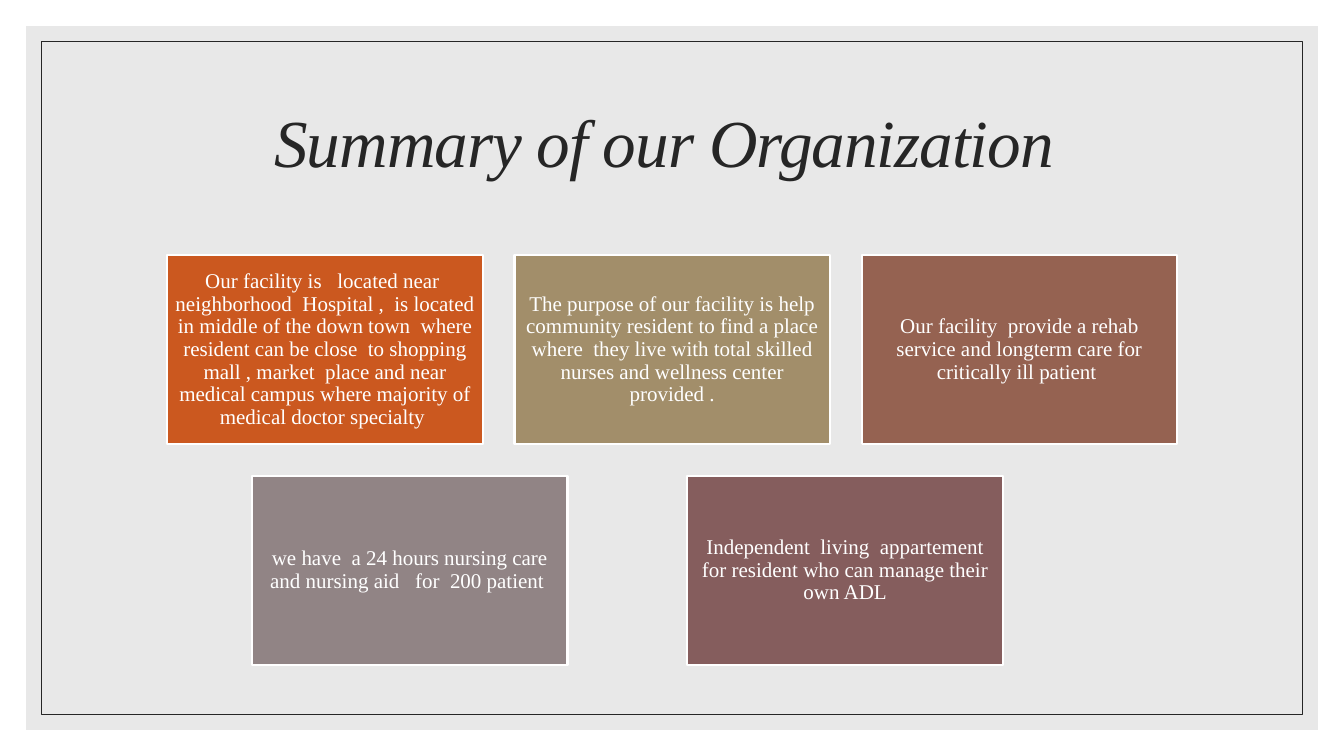
import pptx
import pptx.util
import pptx.dml.color
import pptx.enum.shapes
import pptx.enum.text

Pt = pptx.util.Pt
FONT = "Times New Roman"
COLOURS = {
    "white": "FFFFFF", "panel": "E8E8E8", "ink": "262626",
    "orange": "CB581F", "sand": "A28E6A", "brown": "956251",
    "grey": "918485", "plum": "855D5D",
}
TITLE = "Summary of our Organization "
ROWS = [
    {"left": 119.5, "pitch": 248, "cards": [
        ("orange", "Our facility is   located near  neighborhood  Hospital ,  is located in middle of the down town  where resident can be close  to shopping mall , market  place and near medical campus where majority of medical doctor specialty "),
        ("sand", "The purpose of our facility is help community resident to find a place where  they live with total skilled nurses and wellness center provided ."),
        ("brown", "Our facility  provide a rehab service and longterm care for critically ill patient "),
    ]},
    {"left": 180, "pitch": 311, "cards": [
        ("grey", "we have  a 24 hours nursing care and nursing aid   for  200 patient "),
        ("plum", "Independent  living  appartement for resident who can manage their own ADL"),
    ]},
]
SLIDE_W, SLIDE_H = 960, 540
CARD_W, CARD_H = 225.4, 135.2
CARDS_TOP, ROW_PITCH = 182.2, 157.7
CARD_INSET = 4.5


def colour(name):
    return pptx.dml.color.RGBColor.from_string(COLOURS[name])


def add_box(slide, left, top, width, height, fill=None, line=None, weight=0.5):
    box = slide.shapes.add_shape(
        pptx.enum.shapes.MSO_SHAPE.RECTANGLE, Pt(left), Pt(top), Pt(width), Pt(height))
    box.shadow.inherit = False
    if fill:
        box.fill.solid()
        box.fill.fore_color.rgb = colour(fill)
    else:
        box.fill.background()
    if line:
        box.line.color.rgb = colour(line)
        box.line.width = Pt(weight)
    else:
        box.line.fill.background()
    return box


def write(shape, text, size, ink, inset_x, inset_y):
    frame = shape.text_frame
    frame.word_wrap = True
    frame.vertical_anchor = pptx.enum.text.MSO_ANCHOR.MIDDLE
    frame.margin_left = frame.margin_right = Pt(inset_x)
    frame.margin_top = frame.margin_bottom = Pt(inset_y)
    frame.text = text
    paragraph = frame.paragraphs[0]
    paragraph.alignment = pptx.enum.text.PP_ALIGN.CENTER
    paragraph.line_spacing = 0.9
    font = paragraph.runs[0].font
    font.name = FONT
    font.size = Pt(size)
    font.color.rgb = colour(ink)
    return font


def main():
    deck = pptx.Presentation()
    deck.slide_width, deck.slide_height = Pt(SLIDE_W), Pt(SLIDE_H)
    slide = deck.slides.add_slide(deck.slide_layouts[6])

    for margin, fill, line in [(0, "white", None), (18.7, "panel", None), (29.5, None, "ink")]:
        add_box(slide, margin, margin, SLIDE_W - 2 * margin, SLIDE_H - 2 * margin, fill, line)

    heading = slide.shapes.add_textbox(Pt(84.2), Pt(50.4), Pt(792), Pt(108))
    heading_font = write(heading, TITLE, 48, "ink", 7.2, 3.6)
    heading_font.italic = True
    heading.text_frame.paragraphs[0].runs[0]._r.get_or_add_rPr().set("spc", "-70")

    for row_index, row in enumerate(ROWS):
        top = CARDS_TOP + row_index * ROW_PITCH
        for column, (fill, text) in enumerate(row["cards"]):
            left = row["left"] + column * row["pitch"]
            card = add_box(slide, left, top, CARD_W, CARD_H, fill, "white", 1.5)
            write(card, text, 15, "white", CARD_INSET, CARD_INSET)

    deck.save("out.pptx")


if __name__ == "__main__":
    main()
